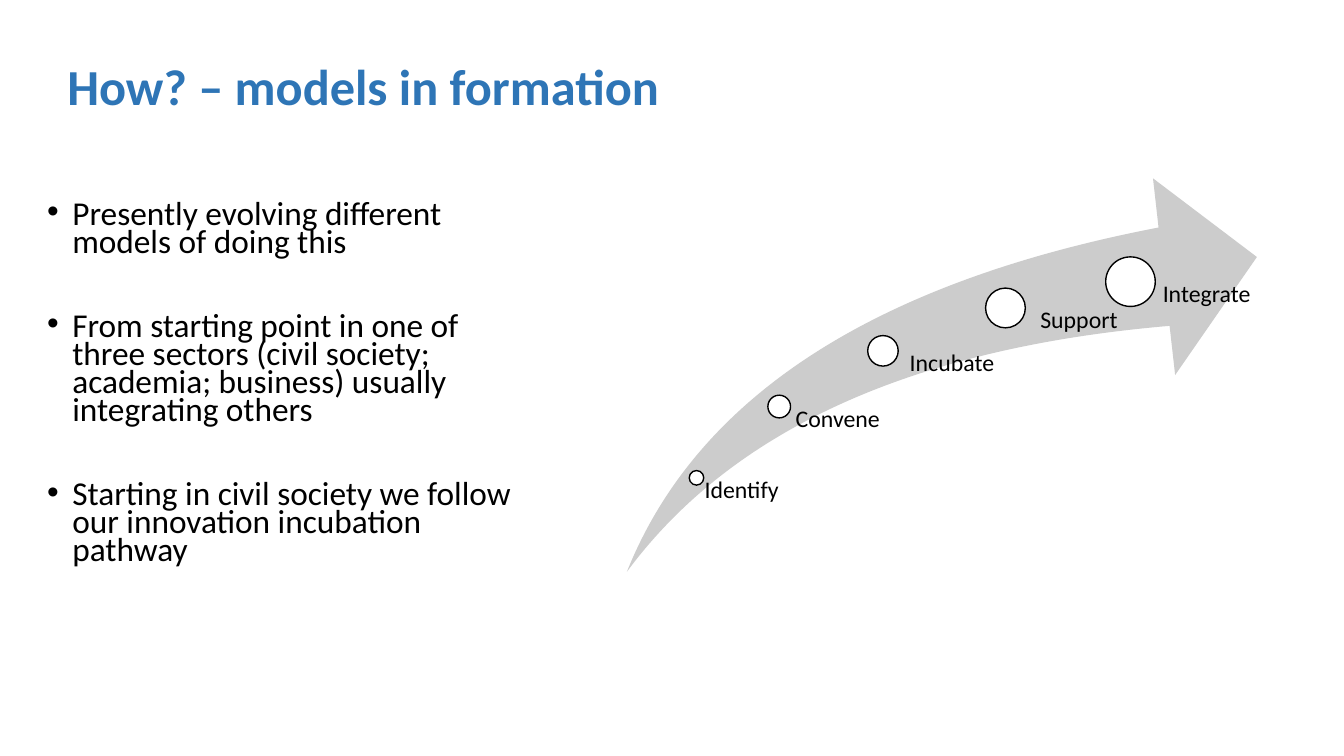
from dataclasses import dataclass

from lxml import etree
from pptx import Presentation
from pptx.dml.color import RGBColor
from pptx.enum import shapes, text
from pptx.oxml import ns
from pptx.util import Pt


@dataclass(frozen=True)
class Theme:
    font: str = "Calibri"
    blue: str = "2E75B6"
    black: str = "000000"
    white: str = "FFFFFF"
    gray: str = "CCCCCC"
    head: float = 36
    body: float = 23.8
    label: float = 17


THEME = Theme()
TITLE = "How? – models in formation"
POINTS = [
    "Presently evolving different models of doing this",
    "From starting point in one of three sectors (civil society; "
    "academia; business) usually integrating others",
    "Starting in civil society we follow our innovation incubation pathway",
]
# Name, centre x, centre y, dot size, label width
STAGES = [
    ("Identify", 497.5, 341.3, 10.4, 59),
    ("Convene", 556.6, 290.4, 16.2, 75),
    ("Incubate", 630.7, 250.6, 21.8, 87),
    ("Support", 718.2, 220, 28.4, 90),
    ("Integrate", 807.5, 201.2, 35.4, 90),
]
ARROW = (447.8, 127.4, 450, 281)


def add_run(para, words, size, color, bold=False):
    run = para.add_run()
    run.text = words
    font = run.font
    font.name = THEME.font
    font.size = Pt(size)
    font.bold = bold
    font.color.rgb = RGBColor.from_string(color)


def add_box(slide, left, top, width, height, wrap=True):
    """Add an empty text box and return its frame."""
    box = slide.shapes.add_textbox(Pt(left), Pt(top), Pt(width), Pt(height))
    frame = box.text_frame
    frame.word_wrap = wrap
    frame.auto_size = text.MSO_AUTO_SIZE.NONE
    return frame


def add_form(slide, kind, left, top, width, height, fill, line=None):
    form = slide.shapes.add_shape(kind, Pt(left), Pt(top), Pt(width), Pt(height))
    form.shadow.inherit = False
    form.fill.solid()
    form.fill.fore_color.rgb = RGBColor.from_string(fill)
    if line:
        form.line.color.rgb = RGBColor.from_string(line)
        form.line.width = Pt(1)
    else:
        form.line.fill.background()
    return form


def add_title(slide):
    frame = add_box(slide, 41, 11.5, 828, 104.4)
    frame.vertical_anchor = text.MSO_ANCHOR.MIDDLE
    para = frame.paragraphs[0]
    para.line_spacing = 0.9
    add_run(para, TITLE, THEME.head, THEME.blue, bold=True)


def set_bullet(para):
    props = para._p.get_or_add_pPr()
    props.set("marL", str(Pt(18)))
    props.set("indent", str(Pt(-18)))
    face = etree.SubElement(props, ns.qn("a:buFont"))
    face.set("typeface", "Arial")
    mark = etree.SubElement(props, ns.qn("a:buChar"))
    mark.set("char", "•")


def add_points(slide):
    frame = add_box(slide, 26.6, 141.8, 346.3, 363.6)
    for i, words in enumerate(POINTS):
        para = frame.add_paragraph() if i else frame.paragraphs[0]
        set_bullet(para)
        para.line_spacing = 0.7
        if i:
            para.space_before = Pt(40)
        add_run(para, words, THEME.body, THEME.black)


def add_stage(slide, name, x, y, size, width):
    """Add a dot and its label, whose corner is the dot's centre."""
    add_form(slide, shapes.MSO_SHAPE.OVAL, x - size / 2, y - size / 2,
             size, size, THEME.white, THEME.black)
    base = ARROW[1] + ARROW[3]
    frame = add_box(slide, x, y, width, base - y, wrap=False)
    frame.margin_left = Pt(size * 0.53)
    frame.margin_top = frame.margin_right = frame.margin_bottom = 0
    para = frame.paragraphs[0]
    para.alignment = text.PP_ALIGN.CENTER
    para.line_spacing = 0.9
    add_run(para, name, THEME.label, THEME.black)


def add_path(slide):
    arrow = add_form(slide, shapes.MSO_SHAPE.SWOOSH_ARROW, *ARROW, THEME.gray)
    arrow.adjustments[0] = 0.25
    arrow.adjustments[1] = 0.25
    for stage in STAGES:
        add_stage(slide, *stage)


def main():
    deck = Presentation()
    deck.slide_width, deck.slide_height = Pt(960), Pt(540)
    slide = deck.slides.add_slide(deck.slide_layouts[6])
    add_title(slide)
    add_points(slide)
    add_path(slide)
    deck.save("out.pptx")


if __name__ == "__main__":
    main()
